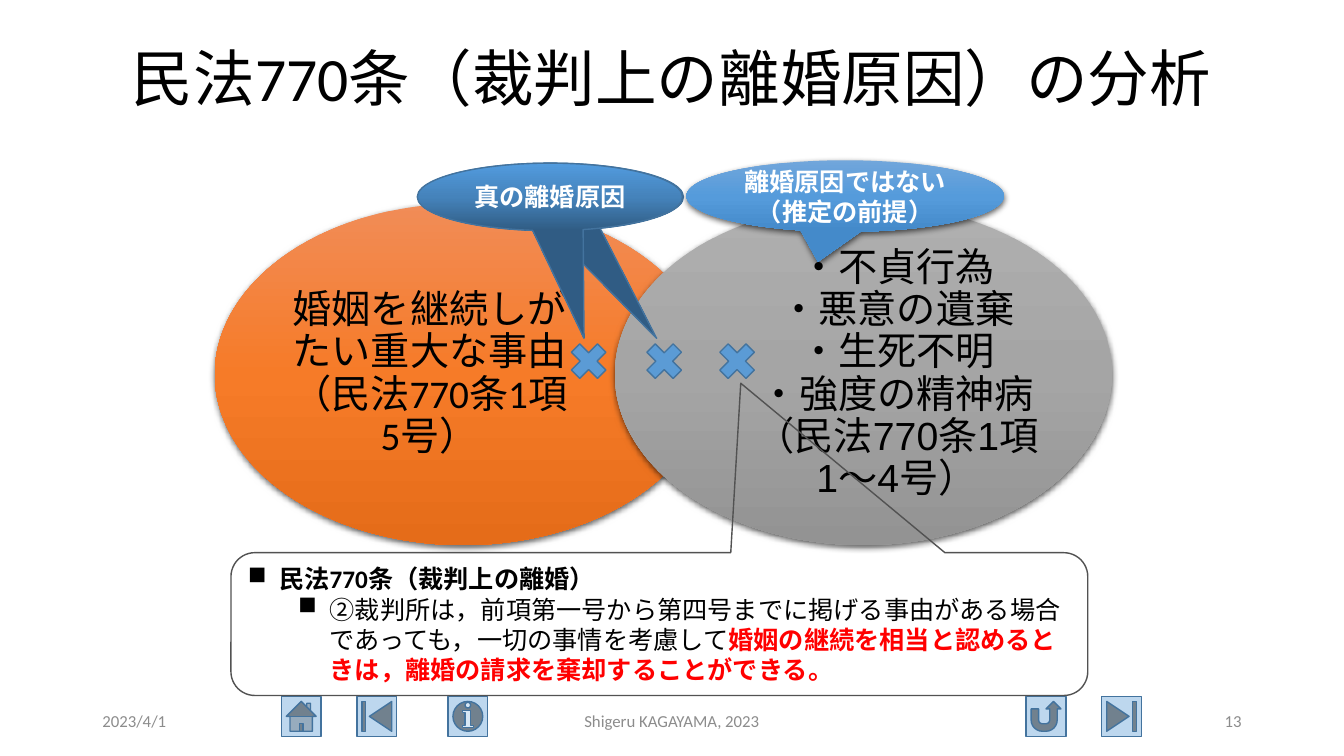
from lxml import etree
from pptx import Presentation
from pptx.dml.color import RGBColor
from pptx.enum import shapes, text
from pptx.oxml.ns import qn
from pptx.util import Pt

SHAPE = shapes.MSO_SHAPE
CENTER = text.PP_ALIGN.CENTER
BLUE, DARK_BLUE, GREY = "5B9BD5", "43739E", "8C8C8C"
DEEP_GRADIENT = ("529BDE", "4583BB", "305C84")


def color(value):
    return RGBColor.from_string(value)


def add_node(parent, tag, **attributes):
    node = etree.SubElement(parent, qn(tag))
    for name, value in attributes.items():
        node.set(name, str(value))
    return node


def add_text(paragraph, content, size=18, font="Calibri", ink="000000", bold=False,
             align=None, spacing=None):
    """Append formatted text; a newline becomes a line break."""
    if align is not None:
        paragraph.alignment = align
    if spacing is not None:
        paragraph.line_spacing = spacing
    for index, line in enumerate(content.split("\n")):
        if index:
            paragraph.add_line_break()
        run = paragraph.add_run()
        run.text = line
        run.font.size = Pt(size)
        run.font.name = font
        run.font.bold = bold
        run.font.color.rgb = color(ink)


def set_gradient(shape, hexes):
    """Fill from top to bottom with evenly spaced colours."""
    shape.fill.gradient()
    shape.fill.gradient_angle = 270
    stops = shape._element.spPr.find(".//" + qn("a:gsLst"))
    for stop in list(stops):
        stops.remove(stop)
    for index, value in enumerate(hexes):
        stop = add_node(stops, "a:gs", pos=100000 * index // (len(hexes) - 1))
        add_node(stop, "a:srgbClr", val=value)


def set_shadow(shape):
    effects = shape._element.spPr.find(qn("a:effectLst"))
    shadow = add_node(effects, "a:outerShdw", blurRad=Pt(4.5), dist=Pt(1.5),
                      dir=90 * 60000, algn="ctr", rotWithShape=0)
    add_node(add_node(shadow, "a:srgbClr", val="000000"), "a:alpha", val=63000)


def add_figure(slide, kind, left, top, width, height, fill=None, line=None,
               adjust=(), shadow=False):
    """Add a preset shape; fill is a colour, a tuple of gradient colours or None."""
    shape = slide.shapes.add_shape(kind, Pt(left), Pt(top), Pt(width), Pt(height))
    for index, value in enumerate(adjust):
        shape.adjustments[index] = value
    if fill is None:
        shape.fill.background()
    elif isinstance(fill, tuple):
        set_gradient(shape, fill)
    else:
        shape.fill.solid()
        shape.fill.fore_color.rgb = color(fill)
    if line:
        shape.line.color.rgb = color(line)
        shape.line.width = Pt(1)
    else:
        shape.line.fill.background()
    shape.shadow.inherit = False
    if shadow:
        set_shadow(shape)
    shape.text_frame.word_wrap = True
    shape.text_frame.vertical_anchor = text.MSO_ANCHOR.MIDDLE
    return shape


def add_label(slide, content, left, top, width, height, **style):
    frame = slide.shapes.add_textbox(Pt(left), Pt(top), Pt(width), Pt(height)).text_frame
    frame.word_wrap = True
    frame.vertical_anchor = text.MSO_ANCHOR.MIDDLE
    add_text(frame.paragraphs[0], content, **style)


def add_set(slide, content, left, fill, font, left_inset, right_inset):
    """Add one ellipse of the set diagram."""
    frame = add_figure(slide, SHAPE.OVAL, left, 145.4, 355, 244,
                       fill=fill, shadow=True).text_frame
    frame.margin_left, frame.margin_right = Pt(left_inset), Pt(right_inset)
    frame.margin_top = frame.margin_bottom = 0
    add_text(frame.paragraphs[0], content, size=28, font=font, align=CENTER, spacing=0.9)


def set_bullet(paragraph, level, indent):
    paragraph.level = level
    properties = paragraph._p.get_or_add_pPr()
    properties.set("marL", str(Pt(indent)))
    properties.set("indent", str(Pt(-22.5)))
    add_node(properties, "a:buChar", char="■")
    paragraph.alignment = text.PP_ALIGN.LEFT


def add_article(slide):
    """Add the callout quoting the article."""
    frame = add_figure(slide, SHAPE.ROUNDED_RECTANGULAR_CALLOUT, 165, 394.8, 612, 102,
                       line="525252", adjust=(0.095, -1.687, 0.167)).text_frame
    heading, clause = frame.paragraphs[0], frame.add_paragraph()
    set_bullet(heading, 0, 22.5)
    add_text(heading, "民法770条（裁判上の離婚）", bold=True)
    set_bullet(clause, 1, 58.5)
    add_text(clause, "②裁判所は，前項第一号から第四号までに掲げる事由がある場合であっても，"
                     "一切の事情を考慮して")
    add_text(clause, "婚姻の継続を相当と認めるときは，離婚の請求を棄却することができる。",
             ink="FF0000", bold=True)


def main():
    presentation = Presentation()
    presentation.slide_width, presentation.slide_height = Pt(960), Pt(540)
    slide = presentation.slides.add_slide(presentation.slide_layouts[6])

    # Navigation buttons
    for kind, left in ((SHAPE.ACTION_BUTTON_HOME, 201),
                       (SHAPE.ACTION_BUTTON_BEGINNING, 255),
                       (SHAPE.ACTION_BUTTON_RETURN, 733),
                       (SHAPE.ACTION_BUTTON_END, 787),
                       (SHAPE.ACTION_BUTTON_INFORMATION, 320)):
        add_figure(slide, kind, left, 497.5, 28.4, 28.4, fill="BDD7EE", line=DARK_BLUE)

    # Title
    add_label(slide, "民法770条（裁判上の離婚原因）の分析", 66, 28.8, 828, 58.3,
              size=44, align=CENTER, spacing=0.9)

    # Two overlapping sets
    add_set(slide, "婚姻を継続しがたい重大な事由\n（民法770条1項5号）", 153.4,
            ("F18C57", "F67B28", "E56C19"), "Calibri", 0, 48)
    add_set(slide, "・不貞行為\n・悪意の遺棄\n・生死不明\n・強度の精神病\n（民法770条1項1～4号）",
            439.2, ("AFAFAF", "A5A5A5", "939393"), "Arial", 48, 0)

    # Case marks
    for left in (402.5, 456.5, 508.5):
        add_figure(slide, SHAPE.MATH_MULTIPLY, left, 240, 36, 36, fill=BLUE, line=DARK_BLUE)

    add_article(slide)

    # True grounds: one balloon with two tails
    for left, tail in ((298.8, 0.399), (298.1, 0.129)):
        balloon = add_figure(slide, SHAPE.OVAL_CALLOUT, left, 116.6, 189.4, 48.2,
                             fill=DEEP_GRADIENT, line=DARK_BLUE, adjust=(tail, 2.097))
    add_text(balloon.text_frame.paragraphs[0], "真の離婚原因", ink="FFFFFF", bold=True,
             align=CENTER)

    # Presumed grounds
    frame = add_figure(slide, SHAPE.OVAL_CALLOUT, 490.3, 114.5, 226.8, 51.1,
                       fill=("71A6DB", "559BDB", "448ACA"), adjust=(-0.086, 0.919),
                       shadow=True).text_frame
    for paragraph, content in ((frame.paragraphs[0], "離婚原因ではない"),
                               (frame.add_paragraph(), "（推定の前提）")):
        add_text(paragraph, content, ink="FFFFFF", bold=True, align=CENTER)

    # Footer
    for content, left, width, align in (
            ("2023/4/1", 66, 216, text.PP_ALIGN.LEFT),
            ("Shigeru KAGAYAMA, 2023", 318, 324, CENTER),
            ("13", 678, 216, text.PP_ALIGN.RIGHT)):
        add_label(slide, content, left, 500.5, width, 28.8, size=12, ink=GREY, align=align)

    presentation.save("out.pptx")


if __name__ == "__main__":
    main()
